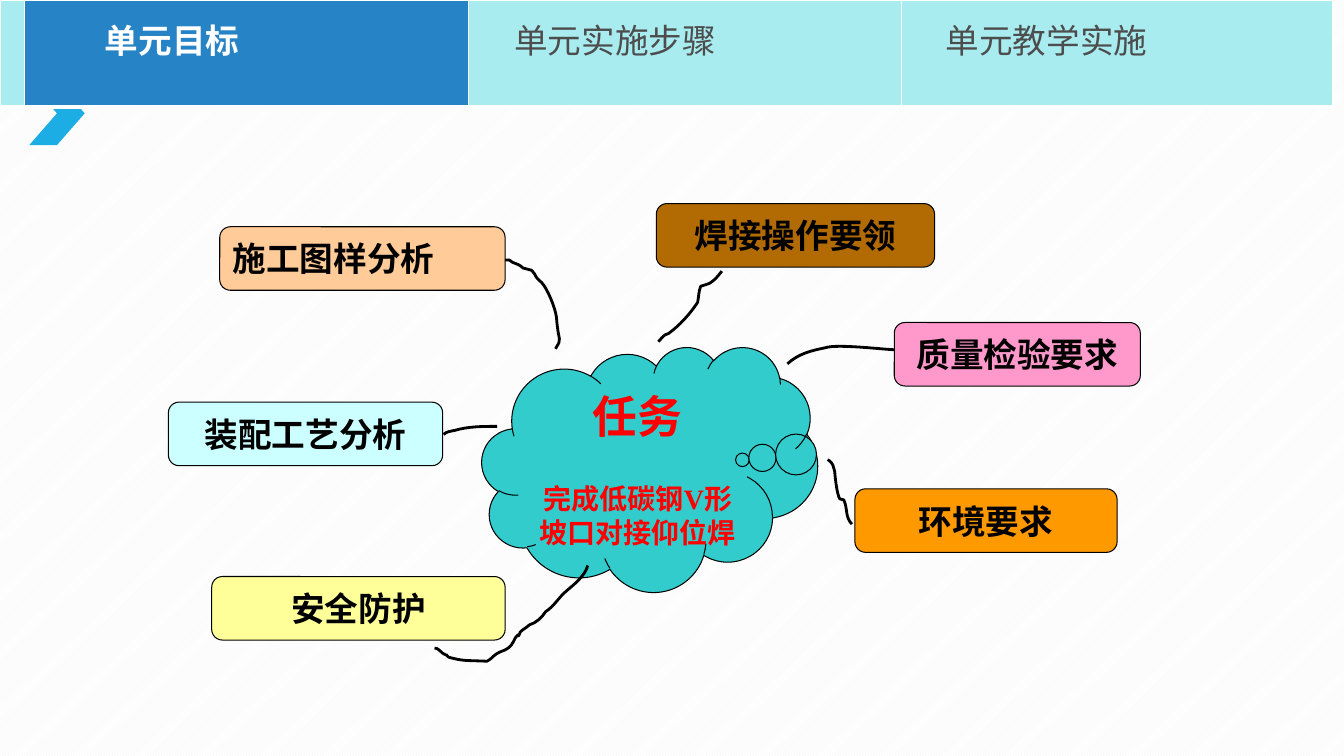
import pptx
import pptx.dml.color
import pptx.enum.dml
import pptx.enum.shapes
import pptx.enum.text
import pptx.oxml
import pptx.oxml.ns
import pptx.util

Inches = pptx.util.Inches
Pt = pptx.util.Pt
SHAPE = pptx.enum.shapes.MSO_SHAPE
ALIGN = pptx.enum.text.PP_ALIGN
ANCHOR = pptx.enum.text.MSO_ANCHOR

LABEL_HEIGHT = 0.63

# Tabs: width, left inset, fill, text, text colour, bold
TABS = [
    (0.24, 0.1, "A8ECEF", "", "4D4D4D", False),
    (4.41, 0.8, "2683C6", "单元目标", "FFFFFF", True),
    (4.29, 0.45, "A8ECEF", "单元实施步骤", "4D4D4D", False),
    (4.28, 0.44, "A8ECEF", "单元教学实施", "4D4D4D", False),
]

# Labels: left, top, width, fill, text, alignment
LABELS = [
    (2.18, 2.25, 2.83, "FFCC99", "施工图样分析", ALIGN.LEFT),
    (1.67, 3.99, 2.72, "CCFFFF", "装配工艺分析", ALIGN.CENTER),
    (2.1, 5.72, 2.91, "FFFF99", "安全防护", ALIGN.CENTER),
    (6.51, 2.02, 2.76, "B26B02", "焊接操作要领", ALIGN.CENTER),
    (8.48, 4.85, 2.6, "FF9900", "环境要求", ALIGN.CENTER),
    (8.87, 3.2, 2.44, "FF99CC", "质量检验要求", ALIGN.CENTER),
]

# Branches: a start point, then three points for each Bezier curve
BRANCHES = [
    [(5.51, 3.46), (5.58, 3.34), (5.54, 3.42), (5.52, 3.15),
     (5.51, 3.06), (5.43, 2.86), (5.37, 2.8), (5.36, 2.79), (5.33, 2.77), (5.32, 2.75),
     (5.3, 2.72), (5.3, 2.7), (5.27, 2.68), (5.26, 2.68), (5.2, 2.66), (5.19, 2.66),
     (5.15, 2.62), (5.12, 2.62), (5.08, 2.6), (5.04, 2.57), (5.06, 2.58), (5.01, 2.58)],
    [(4.93, 4.23), (4.78, 4.23), (4.65, 4.23), (4.51, 4.27),
     (4.47, 4.28), (4.43, 4.28), (4.4, 4.31)],
    [(5.83, 5.61), (5.8, 5.72), (5.69, 5.8), (5.61, 5.87),
     (5.54, 5.93), (5.5, 6.01), (5.41, 6.07), (5.38, 6.12), (5.32, 6.18), (5.25, 6.2),
     (5.22, 6.23), (5.19, 6.24), (5.16, 6.27), (5.12, 6.37), (5.18, 6.24), (5.11, 6.33),
     (5.1, 6.34), (5.1, 6.36), (5.09, 6.37), (5.08, 6.4), (5.06, 6.41), (5.04, 6.43),
     (5, 6.46), (4.96, 6.46), (4.92, 6.49), (4.88, 6.52), (4.87, 6.54), (4.83, 6.56),
     (4.6, 6.55), (4.6, 6.56), (4.45, 6.52), (4.39, 6.46), (4.47, 6.53), (4.39, 6.48),
     (4.36, 6.46), (4.35, 6.43), (4.31, 6.43)],
    [(8.21, 4.56), (8.27, 4.6), (8.26, 4.62), (8.28, 4.68),
     (8.28, 4.7), (8.3, 4.91), (8.33, 4.95), (8.34, 4.96), (8.36, 4.95), (8.37, 4.96),
     (8.41, 5.05), (8.38, 5.13), (8.45, 5.2)],
    [(6.53, 3.39), (6.57, 3.35), (6.58, 3.32), (6.63, 3.31),
     (6.74, 3.23), (6.84, 3.12), (6.92, 3), (6.93, 2.95), (6.93, 2.89), (6.95, 2.84),
     (6.95, 2.84), (7.02, 2.82), (7.04, 2.81), (7.09, 2.78), (7.12, 2.74), (7.16, 2.69)],
    [(7.81, 3.61), (7.92, 3.51), (8.04, 3.48), (8.19, 3.45),
     (8.3, 3.41), (8.79, 3.47), (8.87, 3.47)],
]


def colour(code):
    return pptx.dml.color.RGBColor.from_string(code)


def style_text(para, size, font, code, bold):
    for span in para.runs:
        span.font.size = Pt(size)
        span.font.name = font
        span.font.bold = bold
        span.font.color.rgb = colour(code)


def add_filled(page, kind, box, fill, line=None):
    shape = page.shapes.add_shape(kind, *map(Inches, box))
    shape.shadow.inherit = False
    shape.fill.solid()
    shape.fill.fore_color.rgb = colour(fill)
    if line:
        shape.line.color.rgb = colour(line)
        shape.line.width = Pt(0.75)
    else:
        shape.line.fill.background()
    return shape


def paint_background(page):
    fill = page.background.fill
    fill.patterned()
    fill.pattern = pptx.enum.dml.MSO_PATTERN.LIGHT_UPWARD_DIAGONAL
    fill.fore_color.rgb = colour("F2F2F2")
    fill.back_color.rgb = colour("FFFFFF")


def add_cell_borders(cell):
    properties = cell._tc.get_or_add_tcPr()
    for index, (side, width) in enumerate((("L", 1), ("R", 1), ("T", 1), ("B", 3))):
        border = pptx.oxml.parse_xml(
            f'<a:ln{side} {pptx.oxml.ns.nsdecls("a")} w="{Pt(width)}">'
            f'<a:solidFill><a:srgbClr val="FFFFFF"/></a:solidFill></a:ln{side}>')
        properties.insert(index, border)


def add_tabs(page, left, top, height):
    width = sum(tab[0] for tab in TABS)
    box = map(Inches, (left, top, width, height))
    table = page.shapes.add_table(1, len(TABS), *box).table
    for column, (width, inset, fill, text, code, bold) in enumerate(TABS):
        table.columns[column].width = Inches(width)
        cell = table.cell(0, column)
        cell.fill.solid()
        cell.fill.fore_color.rgb = colour(fill)
        cell.margin_left = Inches(inset)
        cell.text_frame.text = text
        para = cell.text_frame.paragraphs[0]
        para.line_spacing = 1.2
        style_text(para, 24, "Noto Sans CJK SC", code, bold)
        add_cell_borders(cell)


def add_task_cloud(page, box):
    cloud = add_filled(page, SHAPE.CLOUD_CALLOUT, box, "33CCCC", "000000")
    cloud.adjustments[0] = 0.276
    cloud.adjustments[1] = -0.038
    frame = cloud.text_frame
    frame.word_wrap = True
    frame.vertical_anchor = ANCHOR.TOP
    frame.text = "任务\n完成低碳钢V形坡口对接仰位焊"
    for para, size in zip(frame.paragraphs, (32, 20)):
        para.alignment = ALIGN.CENTER
        style_text(para, size, "Times New Roman", "FF0000", True)
    frame.paragraphs[1].space_before = Pt(28)


def add_label(page, left, top, width, fill, text, alignment):
    box = (left, top, width, LABEL_HEIGHT)
    label = add_filled(page, SHAPE.ROUNDED_RECTANGLE, box, fill, "000000")
    frame = label.text_frame
    frame.word_wrap = True
    frame.vertical_anchor = ANCHOR.MIDDLE
    frame.text = text
    frame.paragraphs[0].alignment = alignment
    style_text(frame.paragraphs[0], 24, "Arial", "000000", True)


def bend_segments(branch):
    """Turn each three line segments of a freeform into one Bezier curve."""
    segments = branch._element.xpath(".//a:lnTo")
    for start in range(0, len(segments), 3):
        curve = pptx.oxml.parse_xml(f'<a:cubicBezTo {pptx.oxml.ns.nsdecls("a")}/>')
        segments[start].addprevious(curve)
        for segment in segments[start:start + 3]:
            curve.append(segment[0])
            segment.getparent().remove(segment)


def add_branch(page, points):
    start, *controls = [tuple(map(Inches, point)) for point in points]
    builder = page.shapes.build_freeform(*start)
    builder.add_line_segments(controls, close=False)
    branch = builder.convert_to_shape()
    bend_segments(branch)
    branch.shadow.inherit = False
    branch.fill.background()
    branch.line.color.rgb = colour("000000")
    branch.line.width = Pt(2)


def main():
    deck = pptx.Presentation()
    deck.slide_width, deck.slide_height = Inches(13.33), Inches(7.5)
    page = deck.slides.add_slide(deck.slide_layouts[6])
    paint_background(page)
    # Corner mark, partly under the tabs
    add_filled(page, SHAPE.CHEVRON, (0.29, 0.81, 0.55, 0.63), "1CADE4")
    # Mind map
    add_task_cloud(page, (4.78, 3.44, 3.33, 2.43))
    for label in LABELS:
        add_label(page, *label)
    for points in BRANCHES:
        add_branch(page, points)
    # Navigation
    add_tabs(page, 0, 0, 1.06)
    deck.save("out.pptx")


if __name__ == "__main__":
    main()
